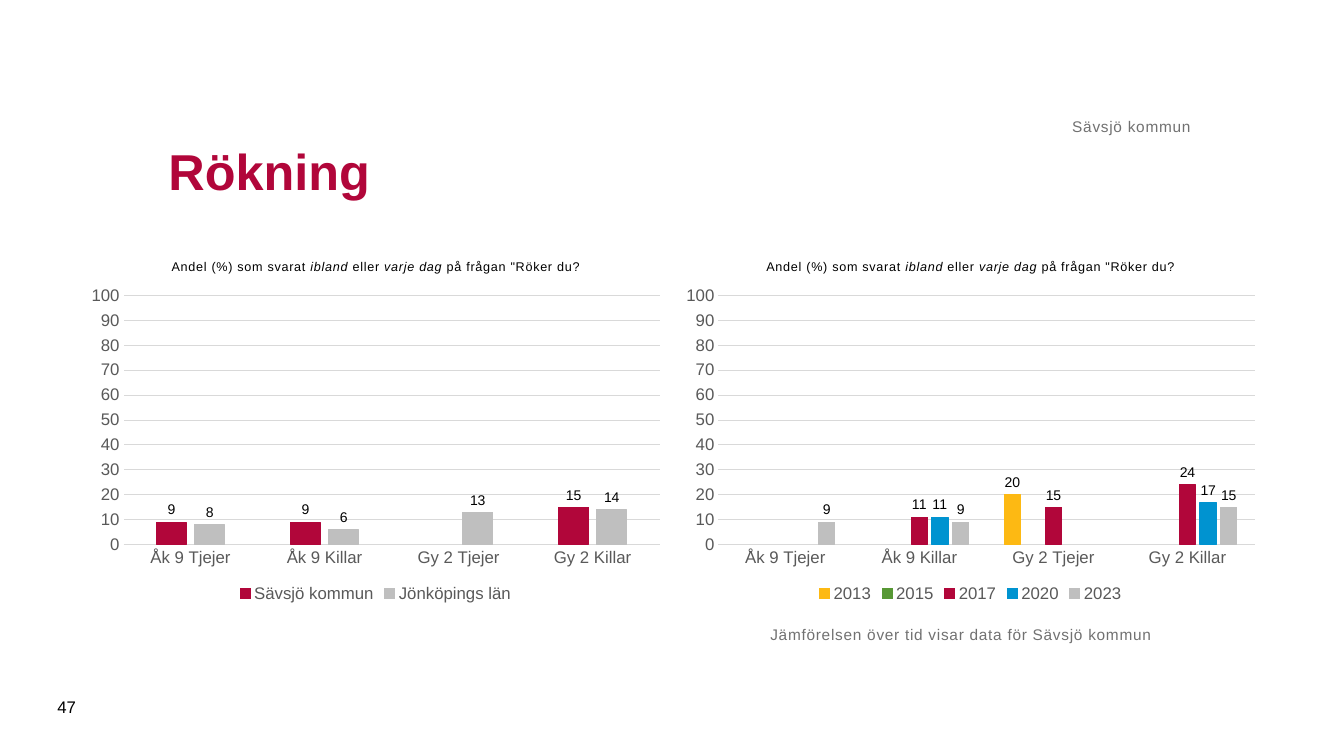
from pptx import Presentation
from pptx.chart.data import CategoryChartData
from pptx.dml.color import RGBColor
from pptx.enum.chart import XL_CHART_TYPE, XL_LABEL_POSITION, XL_LEGEND_POSITION, XL_TICK_MARK
from pptx.enum.text import MSO_ANCHOR, PP_ALIGN
from pptx.util import Inches, Pt

RED, GREY, YELLOW, GREEN, BLUE = "B1063A", "BFBFBF", "FDB913", "579835", "0093D0"
BLACK, AXIS_TEXT, NOTE_TEXT, GRID = "000000", "595959", "717171", "D9D9D9"
NUMBER_FORMAT = "#,##0;#,##0"
GROUPS = ["Åk 9 Tjejer", "Åk 9 Killar", "Gy 2 Tjejer", "Gy 2 Killar"]
QUESTION = [("Andel (%) som\u00a0svarat ", False), ("ibland", True), (" eller ", False),
            ("varje dag", True), (" på frågan \"Röker du?", False)]
COUNTY_COMPARISON = [
    ("Sävsjö kommun", RED, [9, 9, None, 15]),
    ("Jönköpings län", GREY, [8, 6, 13, 14]),
]
YEAR_COMPARISON = [
    ("2013", YELLOW, [None, None, 20, None]),
    ("2015", GREEN, [None, None, None, None]),
    ("2017", RED, [None, 11, 15, 24]),
    ("2020", BLUE, [None, 11, None, 17]),
    ("2023", GREY, [9, 9, None, 15]),
]


def rgb(color):
    return RGBColor.from_string(color)


def style_font(font, size, color, bold=False):
    font.name = "Arial"
    font.size = Pt(size)
    font.bold = bold
    font.color.rgb = rgb(color)


def space_letters(paragraph):
    for run in paragraph.runs:
        run._r.get_or_add_rPr().set("spc", "50")


def style_line(line, color):
    line.color.rgb = rgb(color)
    line.width = Pt(0.75)


def add_title(slide, text):
    title = slide.shapes.title
    title.left, title.top = Inches(1.57), Inches(0.98)
    title.width, title.height = Inches(10.24), Inches(1.42)
    frame = title.text_frame
    frame.text = text
    frame.vertical_anchor = MSO_ANCHOR.MIDDLE
    frame.paragraphs[0].alignment = PP_ALIGN.LEFT
    style_font(frame.paragraphs[0].font, 36, RED, bold=True)


def add_text(slide, text, left, top, width, height, size, color,
             anchor=MSO_ANCHOR.TOP, align=PP_ALIGN.LEFT):
    box = slide.shapes.add_textbox(Inches(left), Inches(top), Inches(width), Inches(height))
    frame = box.text_frame
    frame.word_wrap = True
    frame.vertical_anchor = anchor
    frame.text = text
    paragraph = frame.paragraphs[0]
    paragraph.alignment = align
    style_font(paragraph.font, size, color)
    return frame


def add_note(slide, text, left, top, width, height, **placing):
    """Add grey, letter-spaced text without insets."""
    frame = add_text(slide, text, left, top, width, height, 11, NOTE_TEXT, **placing)
    frame.margin_left = frame.margin_right = frame.margin_top = frame.margin_bottom = 0
    space_letters(frame.paragraphs[0])


def add_question(chart):
    chart.has_title = True
    chart.chart_title.include_in_layout = False
    paragraph = chart.chart_title.text_frame.paragraphs[0]
    for text, italic in QUESTION:
        run = paragraph.add_run()
        run.text = text
        run.font.italic = italic
    style_font(paragraph.font, 9, BLACK)
    space_letters(paragraph)


def style_axes(chart):
    groups, share = chart.category_axis, chart.value_axis
    for axis in (groups, share):
        axis.major_tick_mark = axis.minor_tick_mark = XL_TICK_MARK.NONE
        style_font(axis.tick_labels.font, 12, AXIS_TEXT)
    style_line(groups.format.line, GRID)
    share.format.line.fill.background()
    share.minimum_scale, share.maximum_scale, share.major_unit = 0, 100, 10
    share.tick_labels.number_format = NUMBER_FORMAT
    share.tick_labels.number_format_is_linked = False
    style_line(share.major_gridlines.format.line, GRID)


def style_columns(series, color):
    series.format.fill.solid()
    series.format.fill.fore_color.rgb = rgb(color)
    style_line(series.format.line, color)
    labels = series.data_labels
    labels.show_value = True
    labels.position = XL_LABEL_POSITION.OUTSIDE_END
    labels.number_format = NUMBER_FORMAT
    labels.number_format_is_linked = False
    style_font(labels.font, 10, BLACK)


def add_smoking_chart(slide, left, comparison):
    data = CategoryChartData(number_format=NUMBER_FORMAT)
    data.categories = GROUPS
    for name, _, values in comparison:
        data.add_series(name, values)
    chart = slide.shapes.add_chart(XL_CHART_TYPE.COLUMN_CLUSTERED, Inches(left), Inches(2.4),
                                   Inches(5.87), Inches(3.62), data).chart
    style_font(chart.font, 10, BLACK)
    add_question(chart)
    style_axes(chart)
    plot = chart.plots[0]
    plot.gap_width, plot.overlap = 219, -27
    plot.vary_by_categories = False
    for series, (_, color, _) in zip(plot.series, comparison):
        style_columns(series, color)
    chart.has_legend = True
    chart.legend.position = XL_LEGEND_POSITION.BOTTOM
    chart.legend.include_in_layout = False
    style_font(chart.legend.font, 12, AXIS_TEXT)


def main():
    prs = Presentation()
    prs.slide_width, prs.slide_height = Inches(13.33), Inches(7.5)
    slide = prs.slides.add_slide(prs.slide_layouts[5])
    add_smoking_chart(slide, 0.79, COUNTY_COMPARISON)
    add_smoking_chart(slide, 6.69, YEAR_COMPARISON)
    add_title(slide, "Rökning")
    add_note(slide, "Jämförelsen över tid visar data för Sävsjö kommun", 7.64, 6.2, 5.31, 0.94)
    add_note(slide, "Sävsjö kommun", 1.57, 0.62, 10.24, 0.73,
             anchor=MSO_ANCHOR.BOTTOM, align=PP_ALIGN.RIGHT)
    add_text(slide, "47", 0.47, 6.81, 0.57, 0.4, 12, BLACK, anchor=MSO_ANCHOR.MIDDLE)
    prs.save("out.pptx")


if __name__ == "__main__":
    main()
